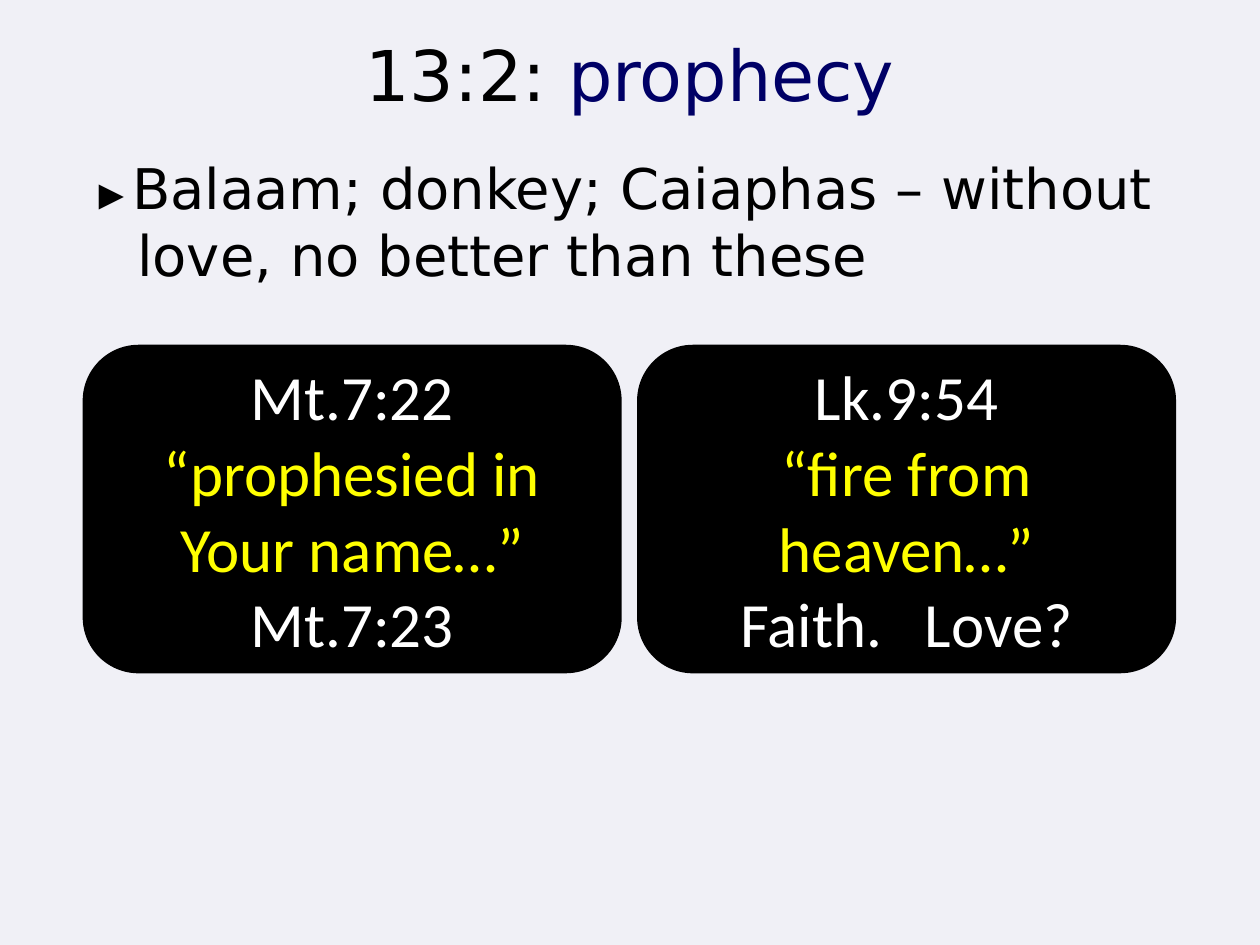
from pptx import Presentation
from pptx.dml.color import RGBColor
from pptx.enum.shapes import MSO_SHAPE
from pptx.enum.text import MSO_ANCHOR, PP_ALIGN
from pptx.util import Inches, Pt

ROUND = MSO_SHAPE.ROUNDED_RECTANGLE
MIDDLE = MSO_ANCHOR.MIDDLE
CENTER = PP_ALIGN.CENTER

PALE = RGBColor(0xF0, 0xF0, 0xF6)
NAVY = RGBColor(0x00, 0x00, 0x66)
BLACK = RGBColor(0x00, 0x00, 0x00)
WHITE = RGBColor(0xFF, 0xFF, 0xFF)
YELLOW = RGBColor(0xFF, 0xFF, 0x00)

SANS, SERIF, CARD = "DejaVu Sans", "Times New Roman", "Calibri"
CARDS = [
    ("Mt.7:22", "“prophesied in Your name…”", "Mt.7:23"),
    ("Lk.9:54", "“fire from heaven…”", "Faith.   Love?"),
]
LEFT, STEP = 0.67, 4.4


def style(font, name, size, color):
    """Set the face, size and colour of a font."""
    font.name = name
    font.size = Pt(size)
    font.color.rgb = color


def add_box(slide, left, top, width, height):
    """Add a wrapping text box and return its text frame."""
    box = slide.shapes.add_textbox(
        Inches(left), Inches(top), Inches(width), Inches(height))
    box.text_frame.word_wrap = True
    return box.text_frame


def add_run(para, text, name, size, color):
    """Add a styled run to a paragraph."""
    run = para.add_run()
    run.text = text
    style(run.font, name, size, color)


def add_title(slide):
    """Add the centred two-colour title."""
    frame = add_box(slide, 0.75, 0.08, 8.5, 1)
    frame.vertical_anchor = MIDDLE
    para = frame.paragraphs[0]
    para.alignment = CENTER
    add_run(para, "13:2: ", SANS, 40, BLACK)
    add_run(para, "prophecy", SANS, 40, NAVY)


def add_point(slide):
    """Add the main point with a hanging indent."""
    para = add_box(slide, 0.62, 1.17, 8.75, 5.92).paragraphs[0]
    para.space_after = Pt(12)
    props = para._p.get_or_add_pPr()
    props.set("marL", str(Inches(0.37)))
    props.set("indent", str(Inches(-0.37)))
    add_run(para, "►", SERIF, 24, BLACK)
    add_run(para, "Balaam; donkey; Caiaphas – without love, no better than these",
            SANS, 32, BLACK)


def add_card(slide, left, lines):
    """Add a black rounded card with three centred lines."""
    card = slide.shapes.add_shape(
        ROUND, Inches(left), Inches(2.75), Inches(4.25), Inches(2.58))
    card.shadow.inherit = False
    card.fill.solid()
    card.fill.fore_color.rgb = BLACK
    card.line.color.rgb = BLACK
    card.line.width = Pt(2)
    frame = card.text_frame
    frame.word_wrap = True
    frame.vertical_anchor = MIDDLE
    frame.text = "\n".join(lines)
    for para, color in zip(frame.paragraphs, (WHITE, YELLOW, WHITE)):
        para.alignment = CENTER
        style(para.font, CARD, 36, color)


def main():
    """Build and save the slide."""
    deck = Presentation()
    deck.slide_width, deck.slide_height = Inches(10), Inches(7.5)
    slide = deck.slides.add_slide(deck.slide_layouts[6])
    fill = slide.background.fill
    fill.solid()
    fill.fore_color.rgb = PALE
    add_title(slide)
    add_point(slide)
    for i, lines in enumerate(CARDS):
        add_card(slide, LEFT + i * STEP, lines)
    deck.save("out.pptx")


if __name__ == "__main__":
    main()
